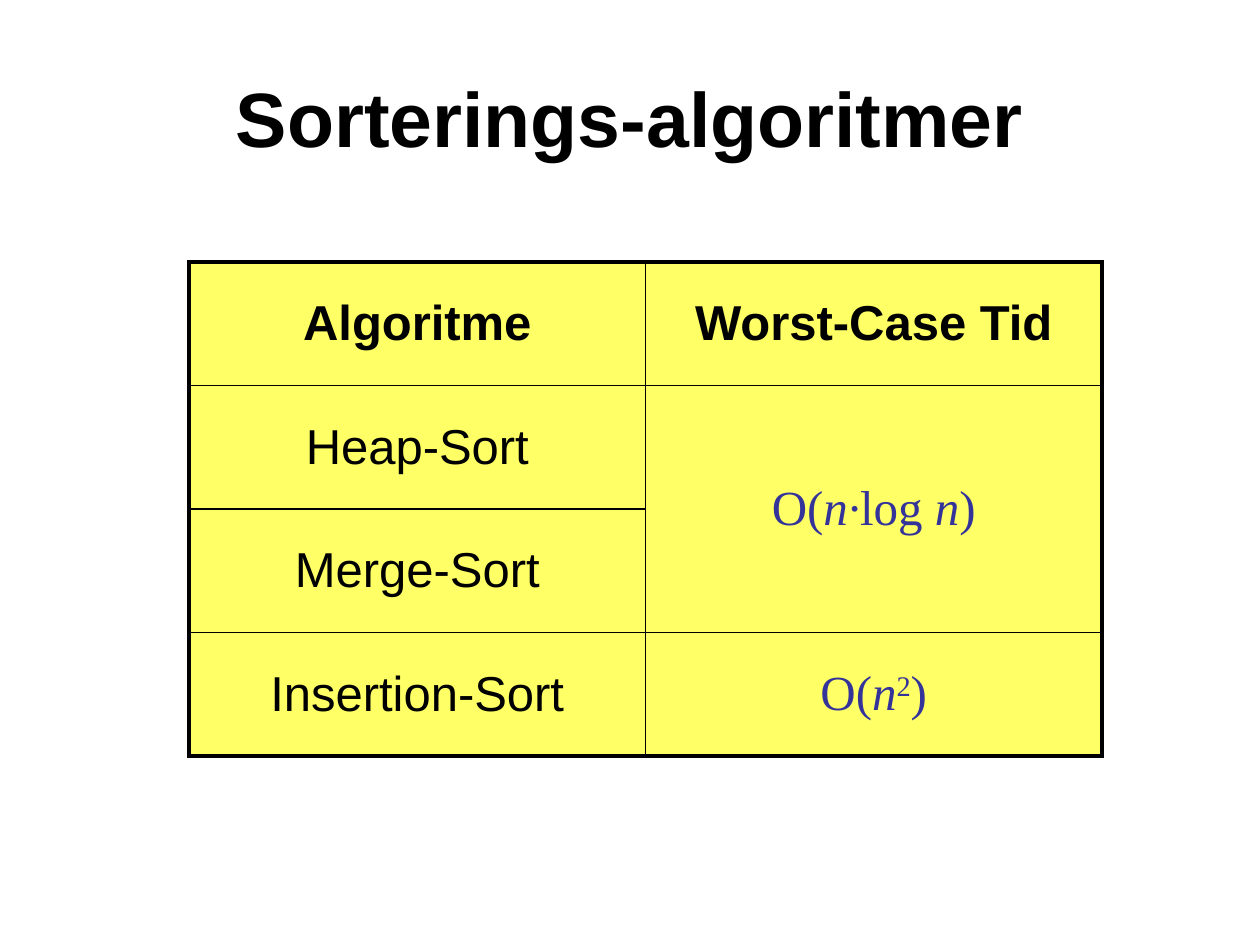
from dataclasses import dataclass

from lxml.etree import SubElement
from pptx import Presentation
from pptx.dml.color import RGBColor
from pptx.enum.text import MSO_ANCHOR, PP_ALIGN
from pptx.oxml.ns import qn
from pptx.util import Pt


@dataclass(frozen=True)
class Theme:
    ink: str = "000000"
    formula: str = "333399"
    cell: str = "FFFF66"
    sans: str = "Arial"
    serif: str = "Times New Roman"
    title_size: int = 44
    cell_size: int = 28
    inner_line: float = 1
    outer_line: float = 2.25


THEME = Theme()
PIXELS_PER_INCH = 126
ITALIC, SUPERSCRIPT = "italic", "superscript"
HEADERS = ["Algoritme", "Worst-Case Tid"]
ALGORITHMS = ["Heap-Sort", "Merge-Sort", "Insertion-Sort"]
LOG_LINEAR = [("O(", None), ("n·", ITALIC), ("log ", None), ("n", ITALIC), (")", None)]
QUADRATIC = [("O(", None), ("n", ITALIC), ("2", SUPERSCRIPT), (")", None)]


def px(length):
    return round(length * 914400 / PIXELS_PER_INCH)


def add_span(paragraph, text, size, font=THEME.sans, color=THEME.ink, bold=False, style=None):
    span = paragraph.add_run()
    span.text = text
    span.font.name = font
    span.font.size = Pt(size)
    span.font.bold = bold
    span.font.italic = style == ITALIC
    span.font.color.rgb = RGBColor.from_string(color)
    if style == SUPERSCRIPT:
        span._r.get_or_add_rPr().set("baseline", "30000")


def add_title(page, text):
    title = page.shapes.title
    title.left, title.top, title.width, title.height = px(63), px(38), px(1134), px(157)
    title.text_frame.vertical_anchor = MSO_ANCHOR.MIDDLE
    paragraph = title.text_frame.paragraphs[0]
    paragraph.alignment = PP_ALIGN.CENTER
    add_span(paragraph, text, THEME.title_size, bold=True)


def add_border(cell, side, width):
    line = SubElement(cell._tc.get_or_add_tcPr(), qn(f"a:ln{side}"), w=str(Pt(width)))
    fill = SubElement(line, qn("a:solidFill"))
    SubElement(fill, qn("a:srgbClr"), val=THEME.ink)


def style_cell(cell, outer_sides):
    for side in "LRTB":
        add_border(cell, side, THEME.outer_line if side in outer_sides else THEME.inner_line)
    cell.fill.solid()
    cell.fill.fore_color.rgb = RGBColor.from_string(THEME.cell)
    cell.vertical_anchor = MSO_ANCHOR.MIDDLE
    cell.text_frame.paragraphs[0].alignment = PP_ALIGN.CENTER


def add_grid(page, row_count, column_count):
    frame = page.shapes.add_table(row_count, column_count, px(189), px(262), px(913), px(494))
    table = frame.table
    table.first_row = table.horz_banding = False
    table.cell(1, 1).merge(table.cell(2, 1))
    for row in range(row_count):
        for column in range(column_count):
            cell = table.cell(row, column)
            if cell.is_spanned:
                continue
            edges = {
                "L": column == 0,
                "R": column == column_count - 1,
                "T": row == 0,
                "B": row == row_count - 1,
            }
            style_cell(cell, [side for side, outer in edges.items() if outer])
    return table


def write_label(cell, text, bold=False):
    add_span(cell.text_frame.paragraphs[0], text, THEME.cell_size, bold=bold)


def write_formula(cell, spans):
    for text, style in spans:
        add_span(cell.text_frame.paragraphs[0], text, THEME.cell_size,
                 THEME.serif, THEME.formula, style=style)


def main():
    deck = Presentation()
    deck.slide_width, deck.slide_height = px(1260), px(945)
    page = deck.slides.add_slide(deck.slide_layouts[5])
    add_title(page, "Sorterings-algoritmer")
    table = add_grid(page, len(ALGORITHMS) + 1, len(HEADERS))
    for column, header in enumerate(HEADERS):
        write_label(table.cell(0, column), header, bold=True)
    for row, algorithm in enumerate(ALGORITHMS, start=1):
        write_label(table.cell(row, 0), algorithm)
    write_formula(table.cell(1, 1), LOG_LINEAR)
    write_formula(table.cell(3, 1), QUADRATIC)
    deck.save("out.pptx")


if __name__ == "__main__":
    main()
